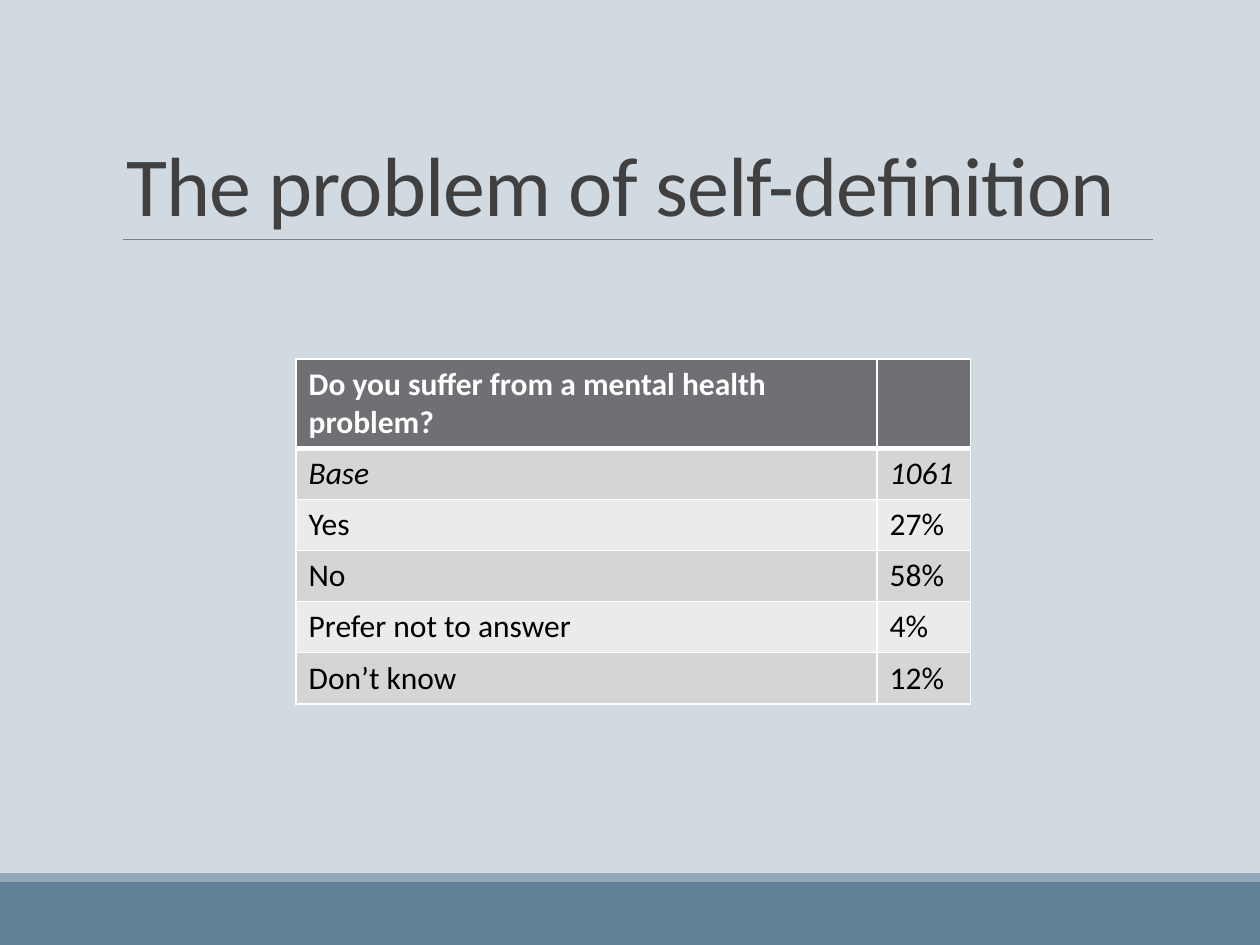
from lxml import etree
from pptx import Presentation
from pptx.dml.color import RGBColor
from pptx.enum.shapes import MSO_CONNECTOR, MSO_SHAPE
from pptx.enum.text import MSO_ANCHOR
from pptx.oxml.ns import qn
from pptx.util import Pt

RECT = MSO_SHAPE.RECTANGLE
LINE = MSO_CONNECTOR.STRAIGHT
BOTTOM = MSO_ANCHOR.BOTTOM

HUES = {
    "back": "D1D9E1", "band": "618197", "strip": "92A9B9", "rule": "808080",
    "title": "404040", "head": "6F6F74", "dark": "D5D5D6", "light": "EBEBEB",
    "white": "FFFFFF", "black": "000000",
}
ROWS = [
    ("Do you suffer from a mental health problem?", ""),
    ("Base", "1061"),
    ("Yes", "27%"),
    ("No", "58%"),
    ("Prefer not to answer", "4%"),
    ("Don’t know", "12%"),
]


def hue(name):
    return RGBColor.from_string(HUES[name])


def paint(fill, name):
    fill.solid()
    fill.fore_color.rgb = hue(name)


class Page:
    """Holds the text style and the slide being built."""

    font = "Calibri"

    def __init__(self, slide):
        self.slide = slide
        self.shapes = slide.shapes
        paint(slide.background.fill, "back")

    def style(self, run, color, **form):
        run.font.color.rgb = hue(color)
        for key, value in {"name": self.font, **form}.items():
            setattr(run.font, key, value)

    def bar(self, top, height, color):
        bar = self.shapes.add_shape(RECT, 0, Pt(top), Pt(720), Pt(height))
        bar.shadow.inherit = False
        paint(bar.fill, color)
        bar.line.fill.background()

    def rule(self, left, right, y):
        rule = self.shapes.add_connector(LINE, Pt(left), Pt(y), Pt(right), Pt(y))
        rule.line.color.rgb = hue("rule")
        rule.line.width = Pt(0.5)
        etree.SubElement(rule._element.spPr, qn("a:effectLst"))

    def title(self, text, left, top, width, height):
        frame = self.shapes.add_textbox(
            Pt(left), Pt(top), Pt(width), Pt(height)).text_frame
        frame.word_wrap = True
        frame.vertical_anchor = BOTTOM
        para = frame.paragraphs[0]
        para.line_spacing = 0.85
        run = para.add_run()
        run.text = text
        self.style(run, "title", size=Pt(48))
        run.font._element.set("spc", "-50")

    def edge(self, cell, side, width):
        props = cell._tc.get_or_add_tcPr()
        line = etree.SubElement(props, qn(f"a:ln{side}"), w=str(Pt(width)))
        fill = etree.SubElement(line, qn("a:solidFill"))
        etree.SubElement(fill, qn("a:srgbClr"), val=HUES["white"])

    def cell(self, cell, text, row):
        head = row == 0
        thick = {"T": 3 if row == 1 else 1, "B": 3 if head else 1}
        for side in "LRTB":
            self.edge(cell, side, thick.get(side, 1))
        paint(cell.fill, "head" if head else "dark" if row % 2 else "light")
        if text:
            run = cell.text_frame.paragraphs[0].add_run()
            run.text = text
            self.style(run, "white" if head else "black",
                       size=Pt(18), bold=head, italic=row == 1)

    def table(self, rows, left, top, widths, heights):
        table = self.shapes.add_table(
            len(rows), len(widths), Pt(left), Pt(top),
            Pt(sum(widths)), Pt(sum(heights))).table
        for col, width in zip(table.columns, widths):
            col.width = Pt(width)
        for r, (texts, height) in enumerate(zip(rows, heights)):
            table.rows[r].height = Pt(height)
            for c, text in enumerate(texts):
                self.cell(table.cell(r, c), text, r)


def main():
    deck = Presentation()
    deck.slide_width, deck.slide_height = Pt(720), Pt(540)
    page = Page(deck.slides.add_slide(deck.slide_layouts[6]))
    page.bar(504, 36, "band")
    page.bar(499, 5, "strip")
    page.rule(70.5, 659, 136.8)
    page.title("The problem of self-definition", 65, 22.3, 594, 114.5)
    page.table(ROWS, 169.2, 205.2, [332, 53.3], [51] + [29.2] * 5)
    deck.save("out.pptx")


if __name__ == "__main__":
    main()
